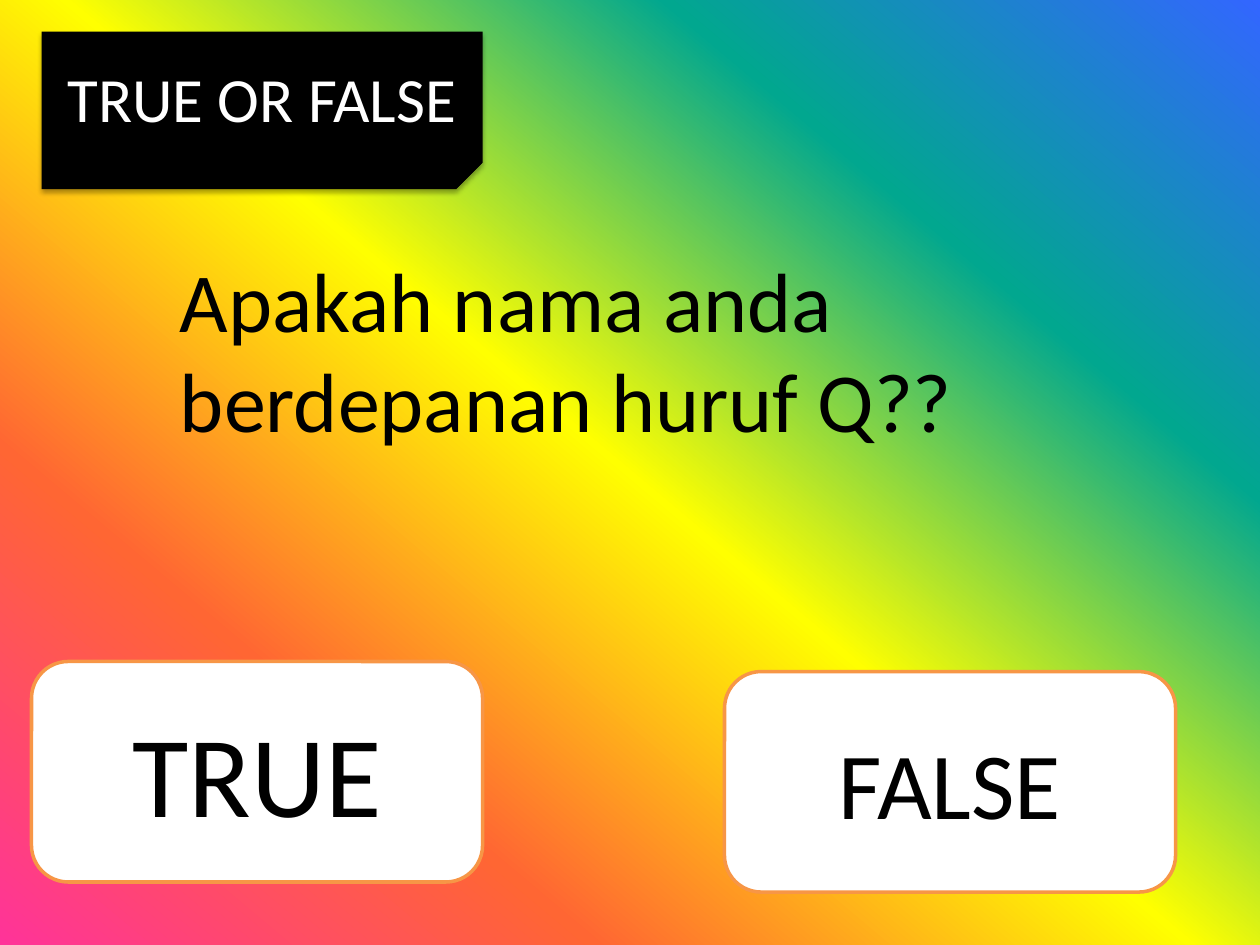
"""Build a true-or-false quiz slide on a rainbow gradient."""
from dataclasses import dataclass
from typing import Optional

from lxml.etree import SubElement
from pptx import Presentation
from pptx.dml.color import RGBColor
from pptx.enum.shapes import MSO_SHAPE as Preset
from pptx.enum.text import MSO_ANCHOR as Anchor, PP_ALIGN as Align
from pptx.oxml.ns import qn
from pptx.util import Inches, Pt

BLACK = RGBColor(0x00, 0x00, 0x00)
WHITE = RGBColor(0xFF, 0xFF, 0xFF)
ORANGE = RGBColor(0xF7, 0x96, 0x46)
RAINBOW = (
    RGBColor(0xFF, 0x33, 0x99),
    RGBColor(0xFF, 0x66, 0x33),
    RGBColor(0xFF, 0xFF, 0x00),
    RGBColor(0x01, 0xA7, 0x8F),
    RGBColor(0x33, 0x66, 0xFF),
)
FONT = "Calibri"


@dataclass(frozen=True)
class Card:
    label: str
    left: float
    top: float
    width: float
    height: float
    size: int
    preset: Preset = Preset.FLOWCHART_ALTERNATE_PROCESS
    fill: RGBColor = WHITE
    ink: RGBColor = BLACK
    outline: Optional[RGBColor] = ORANGE


TITLE = Card("TRUE OR FALSE", 0.33, 0.25, 3.5, 1.25, 36,
             Preset.FOLDED_CORNER, BLACK, WHITE, None)
ANSWERS = (
    Card("TRUE", 0.25, 5.25, 3.58, 1.75, 66),
    Card("FALSE", 5.75, 5.33, 3.58, 1.75, 54),
)


def paint_background(slide) -> None:
    fill = slide.background.fill
    fill.gradient()
    fill.gradient_angle = 50
    stops = next(slide._element.iter(qn("a:gsLst")))
    for stop in list(stops):
        stops.remove(stop)
    step = 100000 // (len(RAINBOW) - 1)
    for index, color in enumerate(RAINBOW):
        stop = SubElement(stops, qn("a:gs"), pos=str(index * step))
        SubElement(stop, qn("a:srgbClr"), val=str(color))


def write(frame, text: str, size: int, color: RGBColor) -> None:
    frame.word_wrap = True
    frame.text = text
    font = frame.paragraphs[0].runs[0].font
    font.name = FONT
    font.size = Pt(size)
    font.color.rgb = color


def draw_card(slide, card: Card):
    shape = slide.shapes.add_shape(
        card.preset, Inches(card.left), Inches(card.top),
        Inches(card.width), Inches(card.height))
    shape.shadow.inherit = False
    shape.fill.solid()
    shape.fill.fore_color.rgb = card.fill
    if card.outline is None:
        shape.line.fill.background()
    else:
        shape.line.color.rgb = card.outline
        shape.line.width = Pt(2)
    frame = shape.text_frame
    write(frame, card.label, card.size, card.ink)
    frame.vertical_anchor = Anchor.MIDDLE
    frame.paragraphs[0].alignment = Align.CENTER
    return shape


def add_shadow(shape) -> None:
    effects = shape._element.spPr.find(qn("a:effectLst"))
    shadow = SubElement(effects, qn("a:outerShdw"), blurRad=str(Pt(3.1)),
                        dist=str(Pt(1.8)), dir="5400000", rotWithShape="0")
    color = SubElement(shadow, qn("a:srgbClr"), val=str(BLACK))
    SubElement(color, qn("a:alpha"), val="35000")


def main() -> None:
    deck = Presentation()
    deck.slide_width, deck.slide_height = Inches(10), Inches(7.5)
    slide = deck.slides.add_slide(deck.slide_layouts[6])
    paint_background(slide)
    add_shadow(draw_card(slide, TITLE))
    question = slide.shapes.add_textbox(
        Inches(1.33), Inches(1.92), Inches(8.42), Inches(1.72))
    write(question.text_frame, "Apakah nama anda berdepanan huruf Q??", 48, BLACK)
    for answer in ANSWERS:
        draw_card(slide, answer)
    deck.save("out.pptx")


if __name__ == "__main__":
    main()
